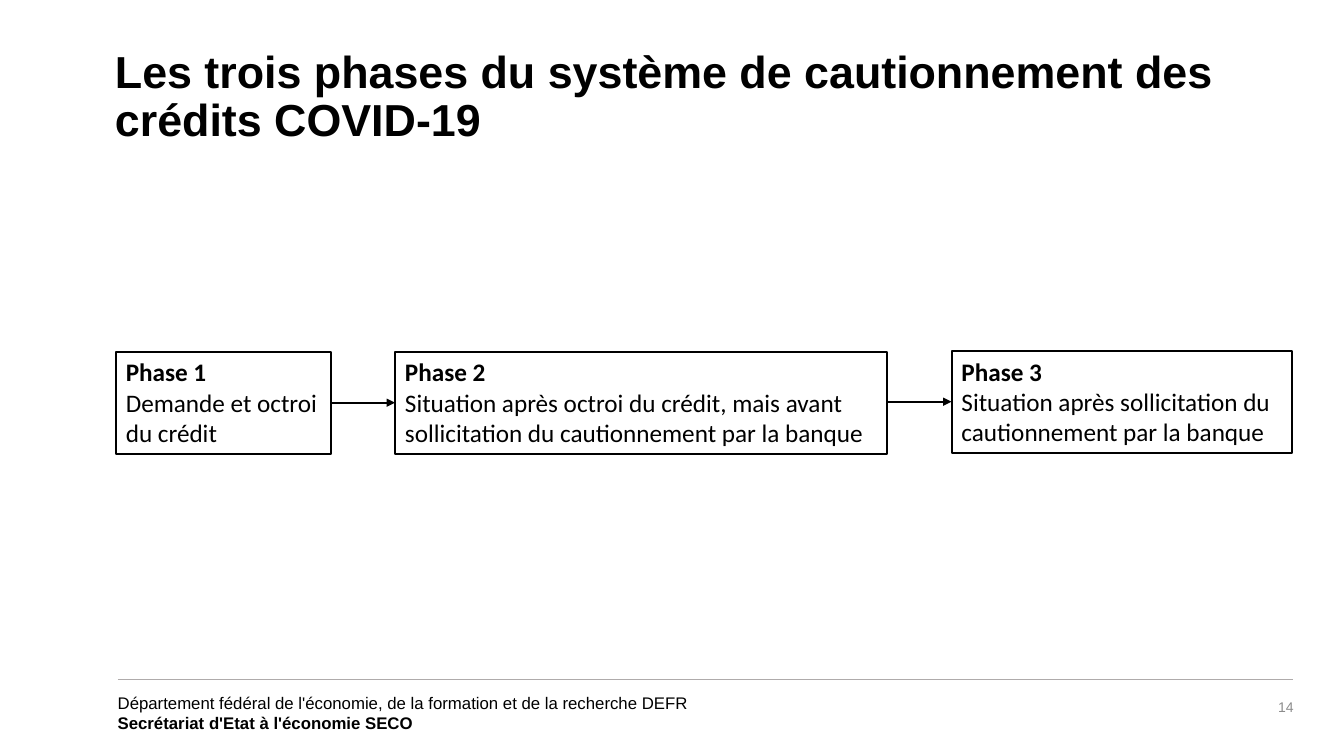
from pptx import Presentation
from pptx.dml.color import RGBColor
from pptx.enum.shapes import MSO_CONNECTOR as CONN, MSO_SHAPE as SHAPE
from pptx.enum.text import MSO_ANCHOR as ANCHOR, PP_ALIGN as ALIGN
from pptx.oxml.ns import qn
from pptx.util import Pt
from lxml.etree import SubElement

BLACK, GREY, RULE = "000000", "8C8C8C", "AFABAB"
TITLE = "Les trois phases du système de cautionnement des crédits COVID-19"
DEPARTMENT = "Département fédéral de l'économie, de la formation et de la recherche DEFR"
OFFICE = "Secrétariat d'Etat à l'économie SECO"
# Left, top, width, heading, description
PHASES = [
    (82.8, 251.3, 153.4, "Phase 1", "Demande et octroi du crédit"),
    (282.2, 251.3, 351.4, "Phase 2",
     "Situation après octroi du crédit, mais avant "
     "sollicitation du cautionnement par la banque"),
    (679.7, 250.6, 243.4, "Phase 3",
     "Situation après sollicitation du cautionnement par la banque"),
]
PHASE_H = 72.7


def rgb(value):
    return RGBColor.from_string(value)


def add_run(p, text, color=BLACK, **fmt):
    r = p.add_run()
    r.text = text
    r.font.color.rgb = rgb(color)
    for name, value in fmt.items():
        setattr(r.font, name, value)


def add_text(s, x, y, w, h):
    tf = s.shapes.add_textbox(Pt(x), Pt(y), Pt(w), Pt(h)).text_frame
    tf.word_wrap = True
    return tf


def add_line(s, x1, y1, x2, y2, color, width, arrow=False):
    line = s.shapes.add_connector(CONN.STRAIGHT, Pt(x1), Pt(y1), Pt(x2), Pt(y2))
    line.line.color.rgb = rgb(color)
    line.line.width = Pt(width)
    if arrow:
        SubElement(line.line._get_or_add_ln(), qn("a:tailEnd"), type="triangle")
    SubElement(line._element.spPr, qn("a:effectLst"))


def add_title(s, x, y, w, h):
    sp = s.shapes.title
    box = dict(left=x, top=y, width=w, height=h)
    for name, value in box.items():
        setattr(sp, name, Pt(value))
    tf = sp.text_frame
    tf.word_wrap = True
    tf.vertical_anchor = ANCHOR.TOP
    p = tf.paragraphs[0]
    p.alignment = ALIGN.LEFT
    p.line_spacing = 0.9
    add_run(p, TITLE, size=Pt(32), name="Arial", bold=True)


def add_phase(s, x, y, w, h, heading, description):
    sp = s.shapes.add_shape(SHAPE.RECTANGLE, Pt(x), Pt(y), Pt(w), Pt(h))
    sp.shadow.inherit = False
    sp.fill.background()
    sp.line.color.rgb = rgb(BLACK)
    sp.line.width = Pt(1.5)
    tf = sp.text_frame
    tf.word_wrap = True
    tf.vertical_anchor = ANCHOR.TOP
    for i, text in enumerate((heading, description)):
        p = tf.add_paragraph() if i else tf.paragraphs[0]
        p.alignment = ALIGN.LEFT
        add_run(p, text, size=Pt(18), name="Calibri", bold=i == 0)


def add_flow(s):
    for x, y, w, heading, description in PHASES:
        add_phase(s, x, y, w, PHASE_H, heading, description)
    # Arrow from each phase to the next, level with the target's middle
    for (x, _, w, *_), (next_x, next_y, *_) in zip(PHASES, PHASES[1:]):
        mid = next_y + PHASE_H / 2
        add_line(s, x + w, mid, next_x, mid, BLACK, 1.5, arrow=True)


def add_footer(s, x, y, w):
    add_line(s, x, y, x + w, y, RULE, 0.75)
    # Sender
    p = add_text(s, x - 7.2, y + 5.8, 465, 36).paragraphs[0]
    add_run(p, DEPARTMENT, size=Pt(12), name="Arial")
    p.add_line_break()
    add_run(p, OFFICE, size=Pt(12), name="Arial", bold=True)
    # Slide number
    tf = add_text(s, x + w - 32.4, y, 39.6, 39.6)
    tf.vertical_anchor = ANCHOR.MIDDLE
    p = tf.paragraphs[0]
    p.alignment = ALIGN.RIGHT
    add_run(p, "14", GREY, size=Pt(10), name="Arial")


def main():
    prs = Presentation()
    prs.slide_width, prs.slide_height = Pt(960), Pt(540)
    s = prs.slides.add_slide(prs.slide_layouts[5])
    add_title(s, 74.9, 31.7, 855.4, 100.8)
    add_flow(s)
    add_footer(s, 84.2, 485.3, 839.6)
    prs.save("out.pptx")


if __name__ == "__main__":
    main()
